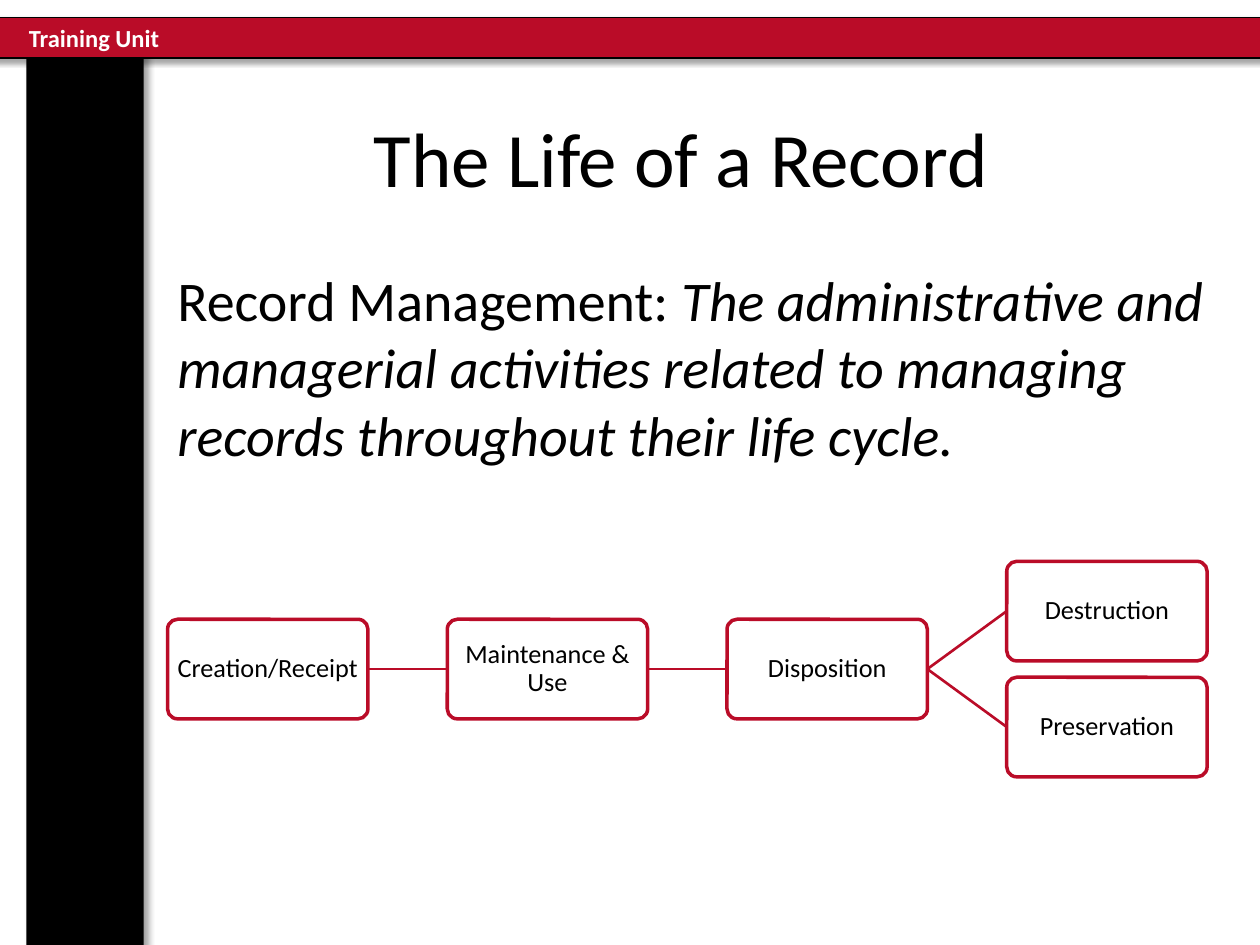
from dataclasses import dataclass

from lxml import etree
from pptx import Presentation
from pptx.dml.color import RGBColor
from pptx.enum.shapes import MSO_CONNECTOR, MSO_SHAPE
from pptx.enum.text import MSO_ANCHOR, PP_ALIGN
from pptx.oxml.ns import qn
from pptx.util import Inches, Pt

RECTANGLE = MSO_SHAPE.RECTANGLE
ROUNDED = MSO_SHAPE.ROUNDED_RECTANGLE
STRAIGHT = MSO_CONNECTOR.STRAIGHT
LEFT, CENTER = PP_ALIGN.LEFT, PP_ALIGN.CENTER
TOP, MIDDLE = MSO_ANCHOR.TOP, MSO_ANCHOR.MIDDLE


@dataclass(frozen=True)
class Theme:
    font: str = "Calibri"
    black: str = "000000"
    white: str = "FFFFFF"
    red: str = "BA0C28"
    title_size: float = 44
    body_size: float = 32
    step_size: float = 15
    label_size: float = 14
    box_line: float = 2
    link_line: float = 1.5


def write_text(frame, spans, *, font, size, color, bold=False, align=LEFT,
               anchor=TOP, wrap=True, inset=None, spacing=None):
    """Fill a text frame with one paragraph of (text, italic) spans."""
    frame.word_wrap = wrap
    frame.vertical_anchor = anchor
    if inset is not None:
        frame.margin_left = frame.margin_right = Inches(inset)
        frame.margin_top = frame.margin_bottom = Inches(inset)
    para = frame.paragraphs[0]
    para.alignment = align
    if spacing is not None:
        para.line_spacing = spacing
    for text, italic in spans:
        span = para.add_run()
        span.text = text
        span.font.name = font
        span.font.size = Pt(size)
        span.font.bold = bold
        span.font.italic = italic
        span.font.color.rgb = RGBColor.from_string(color)


class SlideBuilder:
    def __init__(self, slide, theme):
        self.slide = slide
        self.theme = theme

    def shape(self, preset, bounds, fill, line=None, width=0.75):
        shape = self.slide.shapes.add_shape(preset, *map(Inches, bounds))
        shape.shadow.inherit = False
        shape.fill.solid()
        shape.fill.fore_color.rgb = RGBColor.from_string(fill)
        if line:
            shape.line.color.rgb = RGBColor.from_string(line)
            shape.line.width = Pt(width)
        else:
            shape.line.fill.background()
        return shape

    def bar(self, bounds, fill, *, opacity, blur, distance, angle, line=None):
        """A rectangle that casts an outer shadow."""
        bar = self.shape(RECTANGLE, bounds, fill, line)
        effects = bar._element.spPr.find(qn("a:effectLst"))
        shadow = etree.SubElement(
            effects, qn("a:outerShdw"), blurRad=str(Pt(blur)),
            dist=str(Pt(distance)), dir=str(angle * 60000), rotWithShape="0")
        color = etree.SubElement(shadow, qn("a:srgbClr"), val=self.theme.black)
        etree.SubElement(color, qn("a:alpha"), val=str(opacity * 1000))

    def text(self, bounds, spans, **style):
        box = self.slide.shapes.add_textbox(*map(Inches, bounds))
        write_text(box.text_frame, spans, font=self.theme.font, **style)

    def step(self, bounds, label):
        theme = self.theme
        box = self.shape(ROUNDED, bounds, theme.white, theme.red, theme.box_line)
        box.adjustments[0] = 0.1
        write_text(box.text_frame, [(label, False)], font=theme.font,
                   size=theme.step_size, color=theme.black, align=CENTER,
                   anchor=MIDDLE, inset=0.01, spacing=0.9)

    def link(self, start, end):
        line = self.slide.shapes.add_connector(
            STRAIGHT, *map(Inches, (*start, *end)))
        line.line.color.rgb = RGBColor.from_string(self.theme.red)
        line.line.width = Pt(self.theme.link_line)
        etree.SubElement(line._element.spPr, qn("a:effectLst"))


def main():
    deck = Presentation()
    deck.slide_width, deck.slide_height = Inches(10), Inches(7.5)
    theme = Theme()
    page = SlideBuilder(deck.slides.add_slide(deck.slide_layouts[6]), theme)

    # Side and top bars
    page.bar((0.21, 0.3, 0.93, 7.34), theme.black,
             opacity=40, blur=4, distance=3, angle=45)
    page.bar((-0.13, 0.14, 10.35, 0.32), theme.red, line=theme.black,
             opacity=35, blur=3.1, distance=1.8, angle=90)
    page.text((0.13, 0.13, 1.42, 0.34), [("Training Unit", False)],
              size=theme.label_size, color=theme.white, bold=True, wrap=False)

    # Title and definition
    page.text((1.31, 0.62, 8.19, 1.25), [("The Life of a Record", False)],
              size=theme.title_size, color=theme.black, align=CENTER,
              anchor=MIDDLE)
    page.text((1.31, 2.06, 8.54, 4.64),
              [("Record Management: ", False),
               ("The administrative and managerial activities related to "
                "managing records throughout their life cycle.", True)],
              size=theme.body_size, color=theme.black)

    # Life cycle: columns at an equal pitch, outcomes around the centre line
    left, pitch, width, height = 1.33, 2.22, 1.59, 0.79
    middle, outcome_offset = 5.31, 0.46
    stages = [
        [("Creation/Receipt", 0)],
        [("Maintenance & Use", 0)],
        [("Disposition", 0)],
        [("Destruction", -outcome_offset), ("Preservation", outcome_offset)],
    ]
    for column, stage in enumerate(stages):
        x = left + column * pitch
        for label, offset in stage:
            y = middle + offset
            if column:
                page.link((x - pitch + width, middle), (x, y))
            page.step((x, y - height / 2, width, height), label)

    deck.save("out.pptx")


if __name__ == "__main__":
    main()
